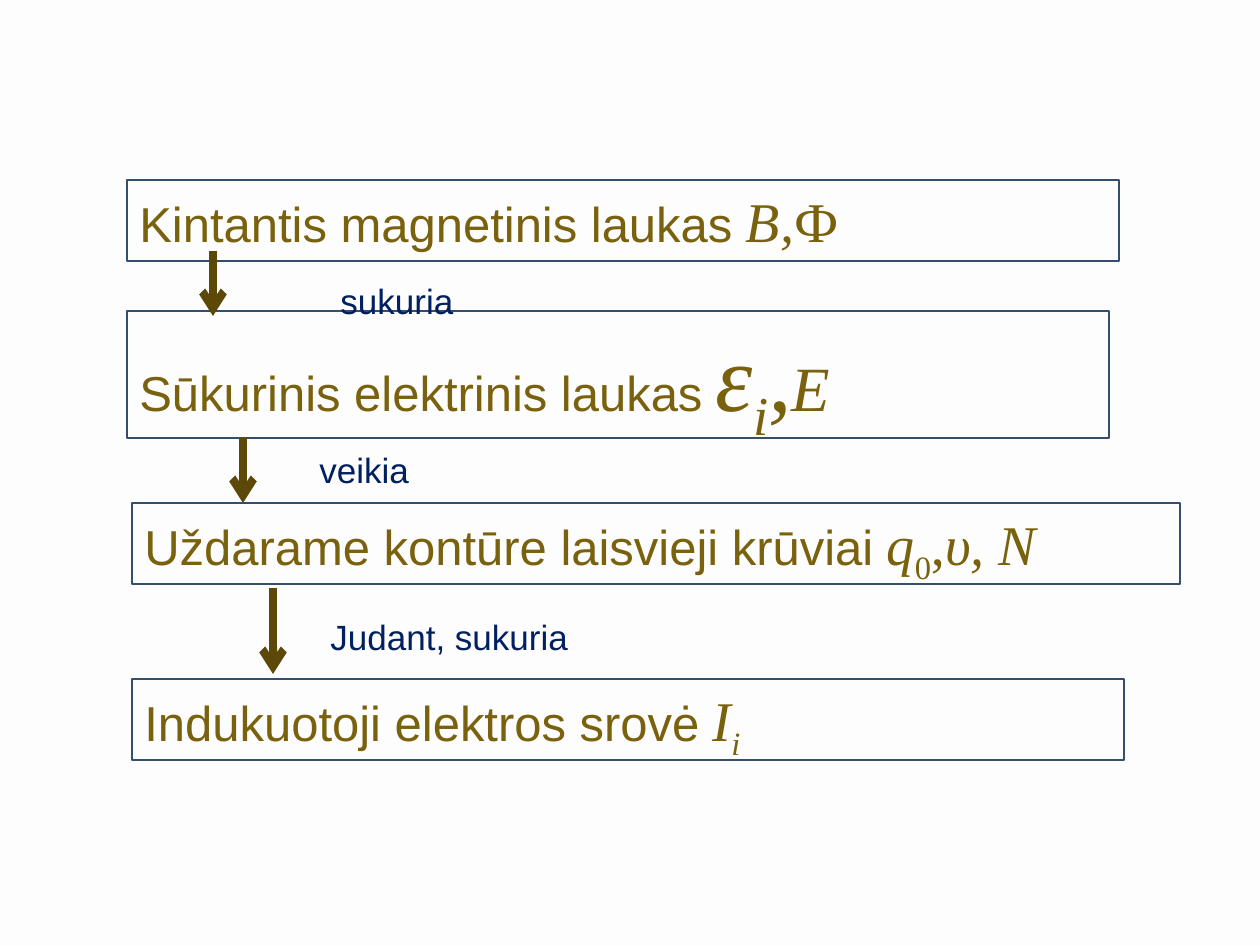
from lxml import etree
from pptx import Presentation
from pptx import util as u
from pptx.dml.color import RGBColor
from pptx.enum import shapes, text
from pptx.oxml.ns import qn

COLORS = {"page": "FDFDFD", "frame": "344E6D", "step": "7A610D", "label": "002060", "arrow": "5C490A"}
SANS, SERIF = "Arial", "Times New Roman"
FLOW = (127, 180, 1054, 580)

# Each symbol is (characters, size, italic, subscript).
STEPS = [
    ((0, 0, 992, 81), "Kintantis magnetinis laukas ",
     [("B,", 32, True, False), ("Ф", 32, False, False)]),
    ((0, 131, 982, 127), "Sūkurinis elektrinis laukas ",
     [("ε", 54, True, False), ("i", 54, True, True), (",", 54, True, False), ("E", 36, True, False)]),
    ((5, 323, 1048, 81), "Uždarame kontūre laisvieji krūviai ",
     [("q", 32, True, False), ("0", 32, False, True), (",", 32, False, False), ("υ, N", 32, True, False)]),
    ((5, 499, 992, 81), "Indukuotoji elektros srovė ",
     [("I", 32, True, False), ("i", 32, True, True)]),
]
LABELS = [
    ((201, 76, 558, 72), "sukuria"),
    ((180, 262, 452, 55), "veikia"),
    ((191, 429, 760, 55), "Judant, sukuria"),
]
ARROWS = [(86, 71, 65), (116, 257, 66), (146, 408, 86)]


def px(length):
    """Turn px into EMU."""
    return u.Emu(round(length * 914400 / 126))


def color(name):
    """Look up a named colour."""
    return RGBColor.from_string(COLORS[name])


def place(box, part):
    """Give the EMU bounds of a part inside a box."""
    left, top, width, height = part
    return [px(length) for length in (box[0] + left, box[1] + top, width, height)]


def add_span(para, words, size, face, tint, italic=False, subscript=False):
    """Add one formatted run."""
    span = para.add_run()
    span.text = words
    span.font.size = u.Pt(size)
    span.font.name = face
    span.font.italic = italic
    span.font.color.rgb = color(tint)
    if subscript:
        span.font._element.set("baseline", "-25000")


def add_step(page, bounds, words, symbols):
    """Draw a framed step with its symbols."""
    step = page.shapes.add_shape(shapes.MSO_SHAPE.RECTANGLE, *bounds)
    step.shadow.inherit = False
    step.fill.background()
    step.line.color.rgb = color("frame")
    step.line.width = u.Pt(0.75)
    frame = step.text_frame
    frame.word_wrap = True
    frame.vertical_anchor = text.MSO_ANCHOR.TOP
    para = frame.paragraphs[0]
    para.alignment = text.PP_ALIGN.LEFT
    add_span(para, words, 28, SANS, "step")
    for characters, size, italic, subscript in symbols:
        add_span(para, characters, size, SERIF, "step", italic, subscript)


def add_label(page, bounds, words):
    """Write the label beside an arrow."""
    frame = page.shapes.add_textbox(*bounds).text_frame
    frame.word_wrap = True
    frame.vertical_anchor = text.MSO_ANCHOR.BOTTOM
    add_span(frame.paragraphs[0], words, 20, SANS, "label")


def add_arrow(page, bounds):
    """Draw an arrow pointing down."""
    left, top, width, height = bounds
    arrow = page.shapes.add_connector(shapes.MSO_CONNECTOR.STRAIGHT, left, top, left + width, top + height)
    arrow.line.color.rgb = color("arrow")
    arrow.line.width = u.Pt(4.5)
    etree.SubElement(arrow.line._get_or_add_ln(), qn("a:tailEnd"), type="arrow")
    etree.SubElement(arrow._element.spPr, qn("a:effectLst"))


def add_flow(page, box):
    """Place the steps, labels and arrows in the box."""
    for part, words, symbols in STEPS:
        add_step(page, place(box, part), words, symbols)
    for part, words in LABELS:
        add_label(page, place(box, part), words)
    for left, top, length in ARROWS:
        add_arrow(page, place(box, (left, top, 0, length)))


def main():
    """Build and save the deck."""
    deck = Presentation()
    deck.slide_width, deck.slide_height = px(1260), px(945)
    page = deck.slides.add_slide(deck.slide_layouts[6])
    page.background.fill.solid()
    page.background.fill.fore_color.rgb = color("page")
    add_flow(page, FLOW)
    deck.save("out.pptx")


if __name__ == "__main__":
    main()
